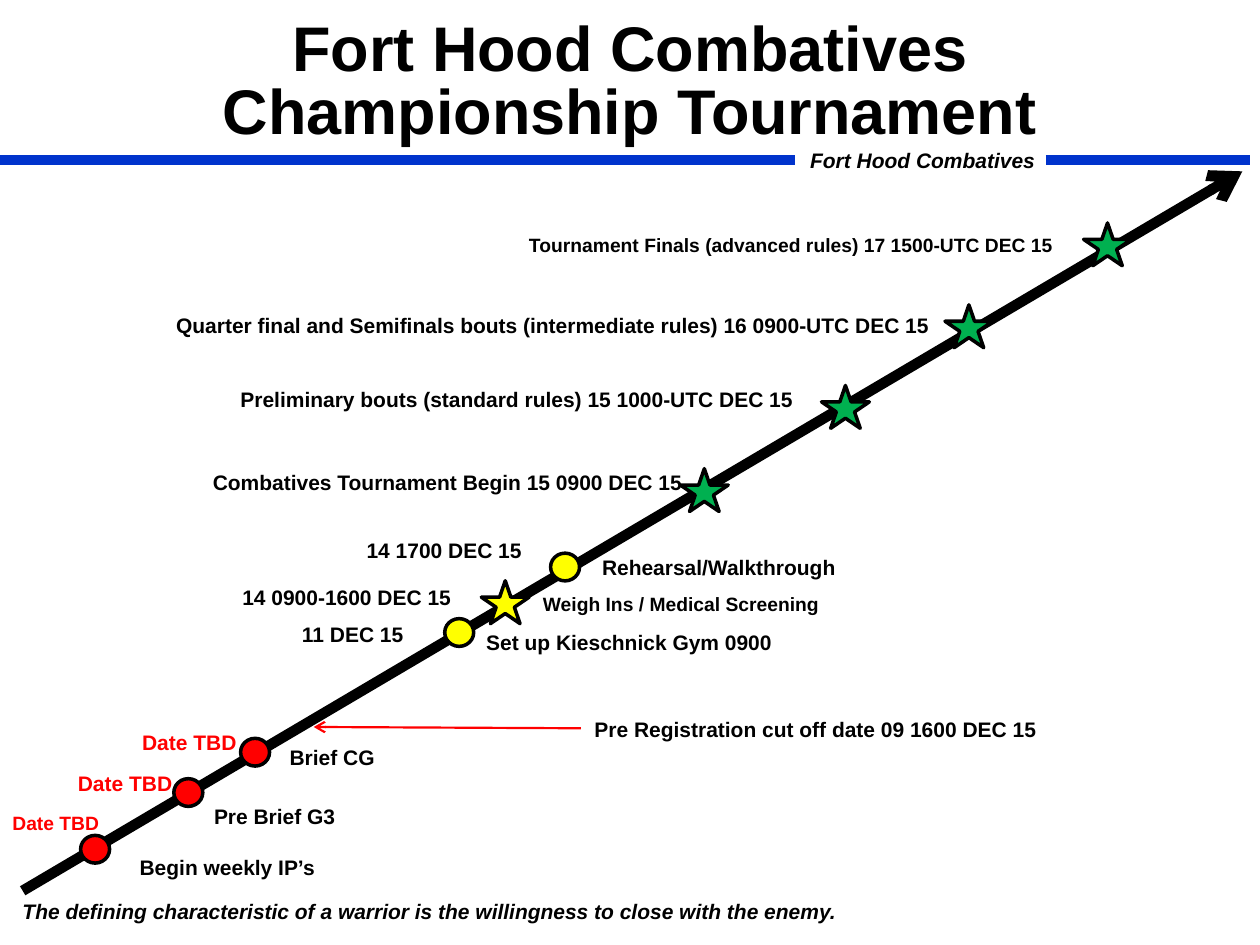
from dataclasses import dataclass

from lxml.etree import SubElement
from pptx import Presentation
from pptx.dml.color import RGBColor
from pptx.enum.shapes import MSO_CONNECTOR, MSO_SHAPE
from pptx.enum.text import MSO_ANCHOR, MSO_AUTO_SIZE, PP_ALIGN
from pptx.oxml.ns import qn
from pptx.util import Inches, Pt


@dataclass(frozen=True)
class Theme:
    font: str = "Arial"
    ink: str = "000000"
    rule: str = "0033CC"
    red: str = "FF0000"
    green: str = "00B050"
    yellow: str = "FFFF00"
    head: int = 36
    body: int = 12
    small: int = 11
    edge: float = 2


T = Theme()
LEFT, RIGHT = PP_ALIGN.LEFT, PP_ALIGN.RIGHT
TITLE = "Fort Hood Combatives\vChampionship Tournament"
BRAND = "Fort Hood Combatives"
MOTTO = "The defining characteristic of a warrior is the willingness to close with the enemy."

# text, left, top, width, size, colour, alignment
LABELS = [
    ("Tournament Finals (advanced rules) 17 1500-UTC DEC 15", 4.1, 1.8, 4.44, T.small, T.ink, LEFT),
    ("Quarter final and Semifinals bouts (intermediate rules) 16 0900-UTC DEC 15",
     1.3, 2.43, 6.4, T.body, T.ink, LEFT),
    ("Preliminary bouts (standard rules) 15 1000-UTC DEC 15", 1.81, 3.02, 4.75, T.body, T.ink, LEFT),
    ("Combatives Tournament Begin 15 0900 DEC 15", 1.59, 3.68, 4.08, T.body, T.ink, LEFT),
    ("14 1700 DEC 15", 2.8, 4.22, 1.44, T.body, T.ink, RIGHT),
    ("Rehearsal/Walkthrough", 4.68, 4.35, 2.07, T.body, T.ink, LEFT),
    ("14 0900-1600 DEC 15", 1.81, 4.59, 1.87, T.body, T.ink, RIGHT),
    ("Weigh Ins / Medical Screening", 4.21, 4.65, 4.39, T.small, T.ink, LEFT),
    ("11 DEC 15", 2.29, 4.88, 1.01, T.body, T.ink, RIGHT),
    ("Set up Kieschnick Gym 0900", 3.76, 4.95, 2.49, T.body, T.ink, LEFT),
    ("Pre Registration cut off date 09 1600 DEC 15", 4.62, 5.64, 3.74, T.body, T.ink, LEFT),
    ("Date TBD", 1.03, 5.74, 0.96, T.body, T.red, LEFT),
    ("Brief CG", 2.2, 5.86, 0.88, T.body, T.ink, LEFT),
    ("Date TBD", 0.52, 6.07, 0.96, T.body, T.red, LEFT),
    ("Pre Brief G3", 1.6, 6.33, 1.22, T.body, T.ink, LEFT),
    ("Date TBD", 0, 6.39, 0.9, T.small, T.red, LEFT),
    ("Begin weekly IP’s", 1.01, 6.73, 1.61, T.body, T.ink, LEFT),
]

DOT = (MSO_SHAPE.OVAL, 0.23, 0.22)
STAR = (MSO_SHAPE.STAR_5_POINT, 0.38, 0.34)
# kind, fill, left and top of each mark
MARKS = [
    (DOT, T.red, [(0.64, 6.63), (1.38, 6.18), (1.91, 5.86)]),
    (DOT, T.yellow, [(3.53, 4.91), (4.37, 4.39)]),
    (STAR, T.yellow, [(3.82, 4.61)]),
    (STAR, T.green, [(5.4, 3.72), (6.52, 3.06), (7.5, 2.42), (8.6, 1.77)]),
]

# start, end, colour, width, arrow
LINES = [
    ((0, 1.27), (6.31, 1.27), T.rule, 6, False),
    ((8.3, 1.27), (9.92, 1.27), T.rule, 6, False),
    ((0.18, 7.07), (9.86, 1.36), T.ink, 6, True),
    ((4.61, 5.78), (2.49, 5.77), T.red, 1.25, True),
]


def style(para, size, color, align=LEFT, italic=False):
    para.alignment = align
    font = para.font
    font.name, font.size = T.font, Pt(size)
    font.bold, font.italic = True, italic
    font.color.rgb = RGBColor.from_string(color)


def add_text(slide, text, left, top, width, size, color, align=LEFT, italic=False, pad=True):
    high = size / 60 + 0.1 if pad else 0.2
    box = slide.shapes.add_textbox(Inches(left), Inches(top), Inches(width), Inches(high))
    frame = box.text_frame
    frame.word_wrap = True
    frame.auto_size = MSO_AUTO_SIZE.SHAPE_TO_FIT_TEXT
    if not pad:
        frame.margin_left = frame.margin_right = frame.margin_top = frame.margin_bottom = 0
    frame.text = text
    style(frame.paragraphs[0], size, color, align, italic)


def add_line(slide, start, end, color, width, arrow):
    line = slide.shapes.add_connector(
        MSO_CONNECTOR.STRAIGHT, *(Inches(v) for v in start + end))
    line.line.color.rgb = RGBColor.from_string(color)
    line.line.width = Pt(width)
    props = line._element.spPr
    if arrow:
        SubElement(props.find(qn("a:ln")), qn("a:tailEnd"), type="arrow")
    SubElement(props, qn("a:effectLst"))


def add_mark(slide, kind, fill, left, top):
    form, wide, high = kind
    mark = slide.shapes.add_shape(form, Inches(left), Inches(top), Inches(wide), Inches(high))
    mark.shadow.inherit = False
    mark.fill.solid()
    mark.fill.fore_color.rgb = RGBColor.from_string(fill)
    mark.line.color.rgb = RGBColor.from_string(T.ink)
    mark.line.width = Pt(T.edge)


def add_title(slide):
    title = slide.shapes.title
    title.left, title.top = Inches(0.5), Inches(0.04)
    title.width, title.height = Inches(9), Inches(1.25)
    frame = title.text_frame
    frame.text = TITLE
    frame.auto_size = MSO_AUTO_SIZE.NONE
    frame.vertical_anchor = MSO_ANCHOR.MIDDLE
    para = frame.paragraphs[0]
    para.line_spacing = Pt(T.head)
    style(para, T.head, T.ink, PP_ALIGN.CENTER)


def main():
    deck = Presentation()
    deck.slide_width, deck.slide_height = Inches(10), Inches(7.5)
    slide = deck.slides.add_slide(deck.slide_layouts[5])
    add_title(slide)
    add_text(slide, MOTTO, 0.08, 7.08, 6.79, T.body, T.ink, italic=True)
    add_text(slide, BRAND, 6.43, 1.17, 2.73, T.body, T.ink, italic=True, pad=False)
    for line in LINES:
        add_line(slide, *line)
    for kind, fill, spots in MARKS:
        for spot in spots:
            add_mark(slide, kind, fill, *spot)
    for label in LABELS:
        add_text(slide, *label)
    deck.save("out.pptx")


if __name__ == "__main__":
    main()
